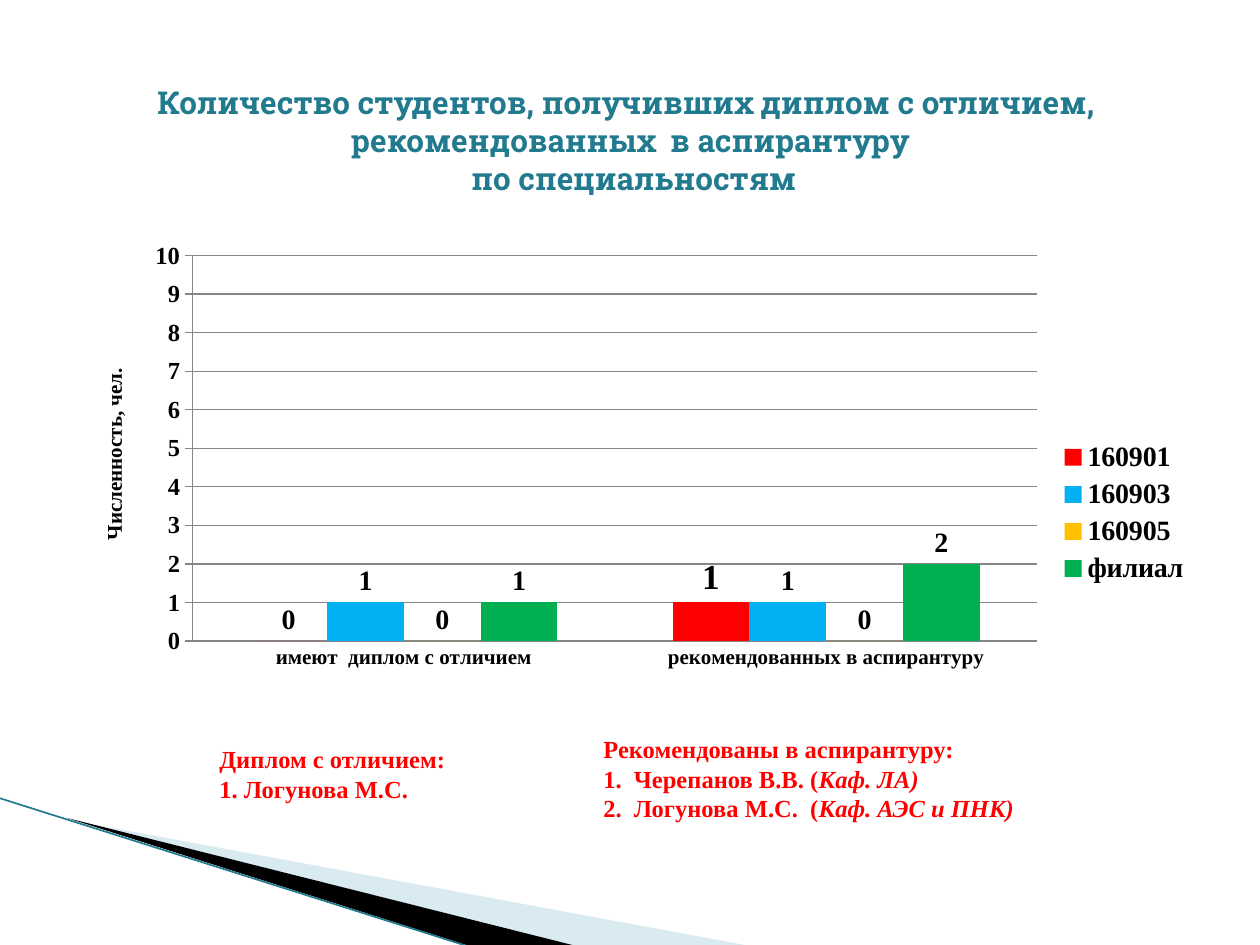
from pptx import Presentation
from pptx.chart.data import CategoryChartData
from pptx.dml.color import RGBColor
from pptx.enum.chart import XL_CHART_TYPE, XL_LABEL_POSITION, XL_LEGEND_POSITION, XL_TICK_MARK
from pptx.enum.shapes import MSO_CONNECTOR
from pptx.enum.text import MSO_ANCHOR, MSO_AUTO_SIZE, PP_ALIGN
from pptx.oxml import parse_xml
from pptx.oxml.ns import nsdecls, qn
from pptx.util import Emu, Pt
from lxml.etree import SubElement

PX = 914400 / 126
SLIDE_W, SLIDE_H = 1260, 945

TEAL = RGBColor(0x22, 0x7A, 0x8F)
PALE_BLUE = RGBColor(0xA0, 0xCB, 0xDC)
BLACK = RGBColor(0, 0, 0)
GRID_GREY = RGBColor(0x86, 0x86, 0x86)
RED = RGBColor(0xFF, 0, 0)
BLUE = RGBColor(0, 0xB0, 0xF0)
AMBER = RGBColor(0xFF, 0xC0, 0)
GREEN = RGBColor(0, 0xB0, 0x50)

HEADING_FONT = "Roboto Slab"
BODY_FONT = "Times New Roman"

TITLE_LINES = ["Количество студентов, получивших диплом с отличием, ",
               "рекомендованных  в аспирантуру", " по специальностям"]
CATEGORIES = ["имеют  диплом с отличием", "рекомендованных в аспирантуру"]
SPECIALTIES = [("160901", (0, 1), RED), ("160903", (1, 1), BLUE),
               ("160905", (0, 0), AMBER), ("филиал", (1, 2), GREEN)]

# Each line is a list of (text, italic) runs
HONOURS = [[("Диплом с отличием:", False)], [("1. Логунова М.С.", False)]]
RECOMMENDED = [
    [("Рекомендованы в аспирантуру:", False)],
    [("1.  Черепанов В.В. (", False), ("Каф. ЛА)", True)],
    [("2.  Логунова М.С.  (", False), ("Каф. АЭС и ПНК)", True)],
]


def px(*lengths):
    return [Emu(round(length * PX)) for length in lengths]


def style_font(font, size, color=BLACK, name=BODY_FONT, italic=False):
    font.name, font.size, font.bold, font.italic = name, Pt(size), True, italic
    font.color.rgb = color


def add_wedge(slide, points, frame, color, alpha=None):
    """Outline through the points, anchored in a frame it may reach beyond."""
    builder = slide.shapes.build_freeform(*points[0], scale=PX)
    builder.add_line_segments(points[1:], close=True)
    wedge = builder.convert_to_shape()
    wedge.shadow.inherit = False
    wedge.fill.solid()
    wedge.fill.fore_color.rgb = color
    wedge.line.fill.background()
    if alpha:
        srgb = wedge.fill._xPr.find(".//" + qn("a:srgbClr"))
        SubElement(srgb, qn("a:alpha"), val=str(alpha * 1000))

    wedge.left, wedge.top, wedge.width, wedge.height = px(*frame)
    outline = wedge._element.find(".//" + qn("a:path"))
    outline.set("w", str(frame[2]))
    outline.set("h", str(frame[3]))
    for corner, (x, y) in zip(outline.iter(qn("a:pt")), points):
        corner.set("x", str(x - frame[0]))
        corner.set("y", str(y - frame[1]))


def add_corner(slide, left, top, width, height):
    """Sweeping wedges in the lower left corner."""
    right, bottom = left + width, top + height
    add_wedge(slide, [(left + 69, top + 22), (right, bottom), (right - 175, bottom)],
              (left + 98, top - 109, 524, 199), PALE_BLUE, 40)
    add_wedge(slide, [(left + 67, top + 20), (right - 174, bottom), (right - 281, bottom)],
              (left - 8, top, 524, 116), BLACK)
    edge = slide.shapes.add_connector(
        MSO_CONNECTOR.STRAIGHT, *px(left - 1, top, right - 283, bottom))
    edge.line.color.rgb = TEAL
    edge.line.width = Pt(0.95)
    SubElement(edge._element.spPr, qn("a:effectLst"))


def add_title(slide, *box):
    title = slide.shapes.title
    title.left, title.top, title.width, title.height = px(*box)
    frame = title.text_frame
    frame.word_wrap = True
    frame.auto_size = MSO_AUTO_SIZE.NONE
    frame.vertical_anchor = MSO_ANCHOR.MIDDLE
    paragraph = frame.paragraphs[0]
    paragraph.alignment = PP_ALIGN.CENTER
    for index, line in enumerate(TITLE_LINES):
        if index:
            paragraph.add_line_break()
        run = paragraph.add_run()
        run.text = line
        style_font(run.font, 18, TEAL, HEADING_FONT)


def manual_layout(inner=False, **fractions):
    target = '<c:layoutTarget val="inner"/>' if inner else ""
    modes = "".join(f'<c:{key}Mode val="edge"/>' for key in "xy")
    sizes = "".join(f'<c:{key} val="{value}"/>' for key, value in fractions.items())
    return parse_xml(f'<c:layout {nsdecls("c")}><c:manualLayout>{target}{modes}{sizes}'
                     '</c:manualLayout></c:layout>')


def format_axes(chart):
    category_axis, value_axis = chart.category_axis, chart.value_axis
    category_axis.major_tick_mark = XL_TICK_MARK.NONE
    value_axis.major_tick_mark = XL_TICK_MARK.OUTSIDE
    value_axis.minimum_scale, value_axis.maximum_scale = 0, 10
    value_axis.major_unit = 1
    value_axis.has_major_gridlines = True
    for axis, size in ((category_axis, 12), (value_axis, 14)):
        style_font(axis.tick_labels.font, size)
    for part in (category_axis, value_axis, value_axis.major_gridlines):
        part.format.line.color.rgb = GRID_GREY
        part.format.line.width = Pt(0.75)

    # Vertical axis title
    axis_title = value_axis.axis_title
    frame = axis_title.text_frame
    run = frame.paragraphs[0].add_run()
    run.text = "Численность, чел."
    style_font(run.font, 12)
    element = axis_title._element
    body = element.find(".//" + qn("a:bodyPr"))
    body.set("rot", "-5400000")
    body.set("vert", "horz")
    for old in element.findall(qn("c:layout")):
        element.remove(old)
    element.find(qn("c:tx")).addnext(manual_layout(x=0.025, y=0.24))


def format_series(plot):
    plot.gap_width, plot.overlap = 150, 0
    plot.vary_by_categories = False
    for series, (_, _, color) in zip(plot.series, SPECIALTIES):
        series.format.fill.solid()
        series.format.fill.fore_color.rgb = color
        series.invert_if_negative = False
        labels = series.data_labels
        labels.show_value = True
        labels.position = XL_LABEL_POSITION.OUTSIDE_END
        style_font(labels.font, 16)
    # The first recommended count stands out
    large_label = plot.series[0].points[1].data_label
    style_font(large_label.font, 20)
    large_label.position = XL_LABEL_POSITION.OUTSIDE_END


def add_student_chart(slide, *box):
    data = CategoryChartData(number_format="General")
    data.categories = CATEGORIES
    for name, counts, _ in SPECIALTIES:
        data.add_series(name, counts)
    chart = slide.shapes.add_chart(XL_CHART_TYPE.COLUMN_CLUSTERED, *px(*box), data).chart
    style_font(chart.font, 20)
    chart.has_title = False
    format_axes(chart)
    format_series(chart.plots[0])

    chart.has_legend = True
    chart.legend.position = XL_LEGEND_POSITION.RIGHT
    chart.legend.include_in_layout = False
    style_font(chart.legend.font, 16)

    plot_area = chart._chartSpace.find(".//" + qn("c:plotArea"))
    for old in plot_area.findall(qn("c:layout")):
        plot_area.remove(old)
    plot_area.insert(0, manual_layout(inner=True, x=0.109, y=0.05, w=0.745, h=0.674))


def add_names(slide, lines, *box):
    frame = slide.shapes.add_textbox(*px(*box)).text_frame
    frame.word_wrap = True
    for index, line in enumerate(lines):
        paragraph = frame.add_paragraph() if index else frame.paragraphs[0]
        for text, italic in line:
            run = paragraph.add_run()
            run.text = text
            style_font(run.font, 14, RED, italic=italic)


def main():
    presentation = Presentation()
    presentation.slide_width, presentation.slide_height = px(SLIDE_W, SLIDE_H)
    slide = presentation.slides.add_slide(presentation.slide_layouts[5])
    add_corner(slide, 0, 798, 750, 148)
    add_student_chart(slide, 69, 227, 1134, 572)
    add_title(slide, 63, 63, 1134, 154)
    add_names(slide, HONOURS, 207, 738, 472, 168)
    add_names(slide, RECOMMENDED, 591, 728, 493, 129)
    presentation.save("out.pptx")


if __name__ == "__main__":
    main()
